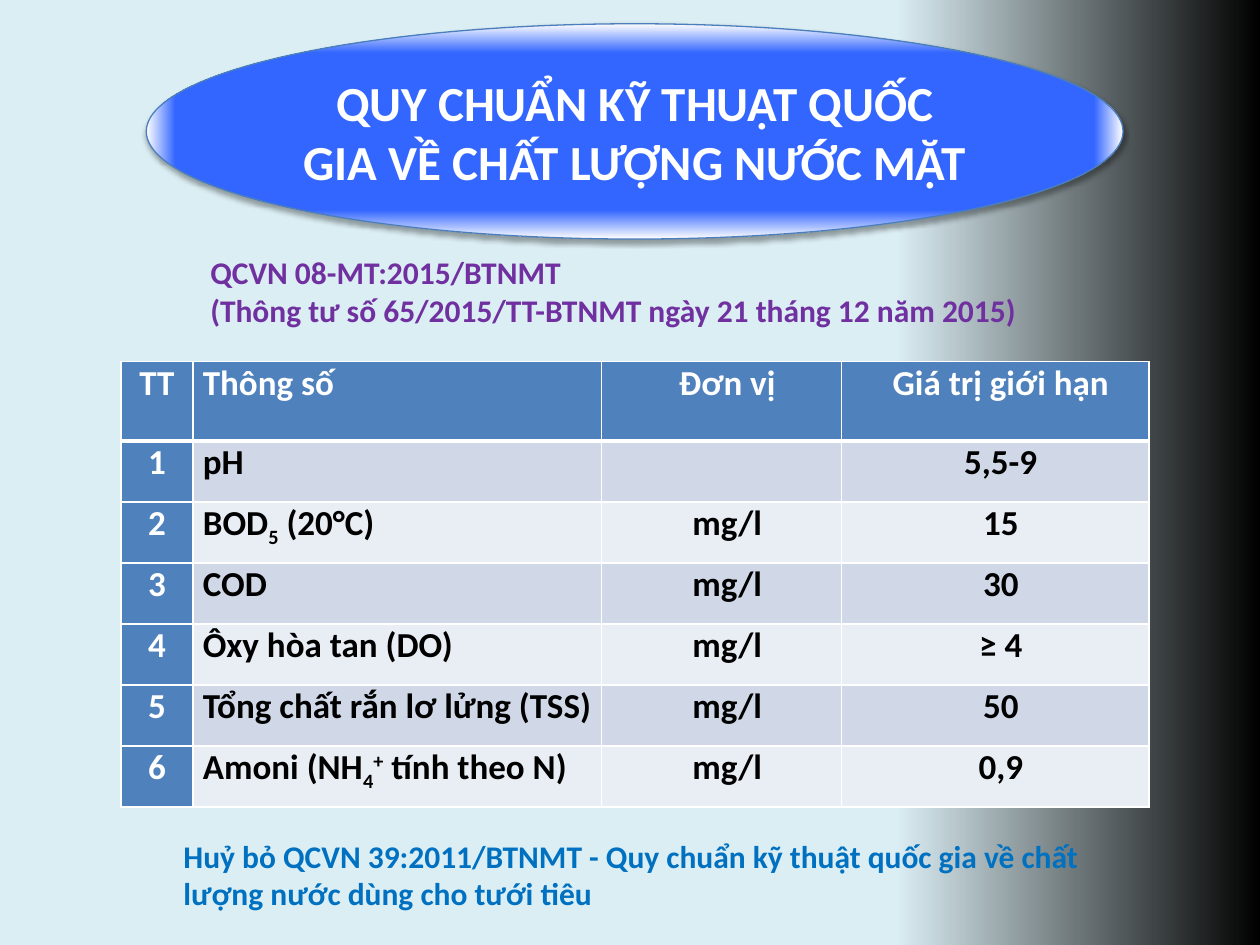
from pptx import Presentation
from pptx import util as u
from pptx.dml import color
from pptx.enum import shapes, text
from pptx.oxml import ns
from pptx.oxml.xmlchemy import OxmlElement

Cm, Pt = u.Cm, u.Pt
WHITE, BLACK, BLUE = "FFFFFF", "000000", "4F81BD"
BANDS = ["D0D8E8", "E9EDF4"]
LEFT, CENTER = text.PP_ALIGN.LEFT, text.PP_ALIGN.CENTER
SUB, SUPER = -25, 30

HEADER = ["TT", "Thông số", "Đơn vị", "Giá trị giới hạn"]
# Name of the parameter, unit, limit; a tuple inside a name is (text, baseline)
PARAMETERS = [
    (["pH"], "", "5,5-9"),
    (["BOD", ("5", SUB), " (20°C)"], "mg/l", "15"),
    (["COD"], "mg/l", "30"),
    (["Ôxy hòa tan (DO)"], "mg/l", "≥ 4"),
    (["Tổng chất rắn lơ lửng (TSS)"], "mg/l", "50"),
    (["Amoni (NH", ("4", SUB), ("+", SUPER), " tính theo N)"], "mg/l", "0,9"),
]
COLUMNS = [  # width, indent, alignment
    (1.45, 0, CENTER),
    (8.24, 0.2, LEFT),
    (4.83, 0.23, CENTER),
    (6.2, 0.23, CENTER),
]


def rgb(value):
    return color.RGBColor.from_string(value)


def node(tag, *children, **attrs):
    e = OxmlElement(tag)
    for name, value in attrs.items():
        e.set(name, str(value))
    e.extend(children)
    return e


def gradient(fill, *stops):
    """Fill with two (position, colour) stops."""
    fill.gradient()
    for stop, (position, value) in zip(fill.gradient_stops, stops):
        stop.position = position
        stop.color.rgb = rgb(value)


class Deck:
    def __init__(self, font="Calibri"):
        self.font = font
        self.prs = Presentation()
        self.prs.slide_width, self.prs.slide_height = Cm(25.4), Cm(19.05)
        self.s = self.prs.slides.add_slide(self.prs.slide_layouts[6])

    def background(self, *stops):
        fill = self.s.background.fill
        gradient(fill, *stops)
        fill.gradient_angle = 0

    def paragraph(self, p, parts, size, value, align=LEFT):
        """Fill a paragraph with strings or (string, baseline) pairs."""
        p.alignment = align
        f = p.font
        f.name, f.size, f.bold = self.font, Pt(size), True
        f.color.rgb = rgb(value)
        for part in parts:
            label, baseline = part if isinstance(part, tuple) else (part, 0)
            r = p.add_run()
            r.text = label
            if baseline:
                r._r.get_or_add_rPr().set("baseline", str(baseline * 1000))

    def title_ellipse(self, label, *box):
        sp = self.s.shapes.add_shape(shapes.MSO_SHAPE.OVAL, *map(Cm, box))
        gradient(sp.fill, (0.73, "3366FF"), (1, WHITE))
        grad = sp._element.spPr.find(ns.qn("a:gradFill"))
        grad.remove(grad.find(ns.qn("a:lin")))
        center = node("a:fillToRect", l=50000, t=50000, r=50000, b=50000)
        grad.append(node("a:path", center, path="shape"))
        sp.line.color.rgb = rgb("4B7EBC")
        sp.line.width = Pt(0.75)
        sp.shadow.inherit = False
        black = node("a:srgbClr", node("a:alpha", val=35000), val=BLACK)
        sp._element.spPr.find(ns.qn("a:effectLst")).append(
            node("a:outerShdw", black, blurRad=Pt(3.1), dist=Pt(1.8),
                 dir=90 * 60000, rotWithShape=0))
        tf = sp.text_frame
        tf.word_wrap = True
        tf.vertical_anchor = text.MSO_ANCHOR.MIDDLE
        self.paragraph(tf.paragraphs[0], [label], 28, WHITE, CENTER)

    def note(self, lines, value, *box):
        tf = self.s.shapes.add_textbox(*map(Cm, box)).text_frame
        tf.word_wrap = True
        for i, line in enumerate(lines):
            p = tf.add_paragraph() if i else tf.paragraphs[0]
            self.paragraph(p, [line], 18, value)

    def cell(self, c, parts, fill, value, indent, align, top=1, bottom=1):
        c.margin_left = c.margin_right = c.margin_top = c.margin_bottom = 0
        c.fill.solid()
        c.fill.fore_color.rgb = rgb(fill)
        p = c.text_frame.paragraphs[0]
        self.paragraph(p, parts, 20, value, align)
        p.space_before = Pt(6)
        p._p.get_or_add_pPr().set("marL", str(Cm(indent)))
        borders = {"L": 1, "R": 1, "T": top, "B": bottom}
        for i, (side, width) in enumerate(borders.items()):
            paint = node("a:solidFill", node("a:srgbClr", val=WHITE))
            line = node(f"a:ln{side}", paint, w=Pt(width))
            c._tc.get_or_add_tcPr().insert(i, line)

    def limits_table(self, left, top, header_height, row_height):
        rows = [[[h] for h in HEADER]]
        for i, (name, unit, limit) in enumerate(PARAMETERS, 1):
            rows.append([[str(i)], name, [unit] if unit else [], [limit]])
        width = sum(column[0] for column in COLUMNS)
        height = header_height + row_height * len(PARAMETERS)
        table = self.s.shapes.add_table(
            len(rows), len(COLUMNS), *map(Cm, (left, top, width, height))).table
        for i, row in enumerate(rows):
            table.rows[i].height = Cm(row_height if i else header_height)
            for j, (width, indent, align) in enumerate(COLUMNS):
                table.columns[j].width = Cm(width)
                body = i > 0 and j > 0
                self.cell(table.cell(i, j), row[j],
                          BANDS[(i - 1) % 2] if body else BLUE,
                          BLACK if body else WHITE, indent, align,
                          top=3 if i == 1 else 1, bottom=1 if i else 3)


def main():
    deck = Deck()
    deck.background((0.71, "DBEEF4"), (1, BLACK))
    deck.title_ellipse("QUY CHUẨN KỸ THUẬT QUỐC GIA VỀ CHẤT LƯỢNG NƯỚC MẶT",
                       2.95, 0.48, 19.69, 4.34)
    deck.limits_table(2.44, 7.29, 1.6, 1.23)
    deck.note(["QCVN 08-MT:2015/BTNMT",
               "(Thông tư số 65/2015/TT-BTNMT ngày 21 tháng 12 năm 2015)"],
              "7030A0", 3.99, 4.98, 18.67, 1.8)
    deck.note(["Huỷ bỏ QCVN 39:2011/BTNMT - Quy chuẩn kỹ thuật quốc gia về "
               "chất lượng nước dùng cho tưới tiêu"],
              "0070C0", 3.45, 16.74, 18.67, 1.8)
    deck.prs.save("out.pptx")


if __name__ == "__main__":
    main()
